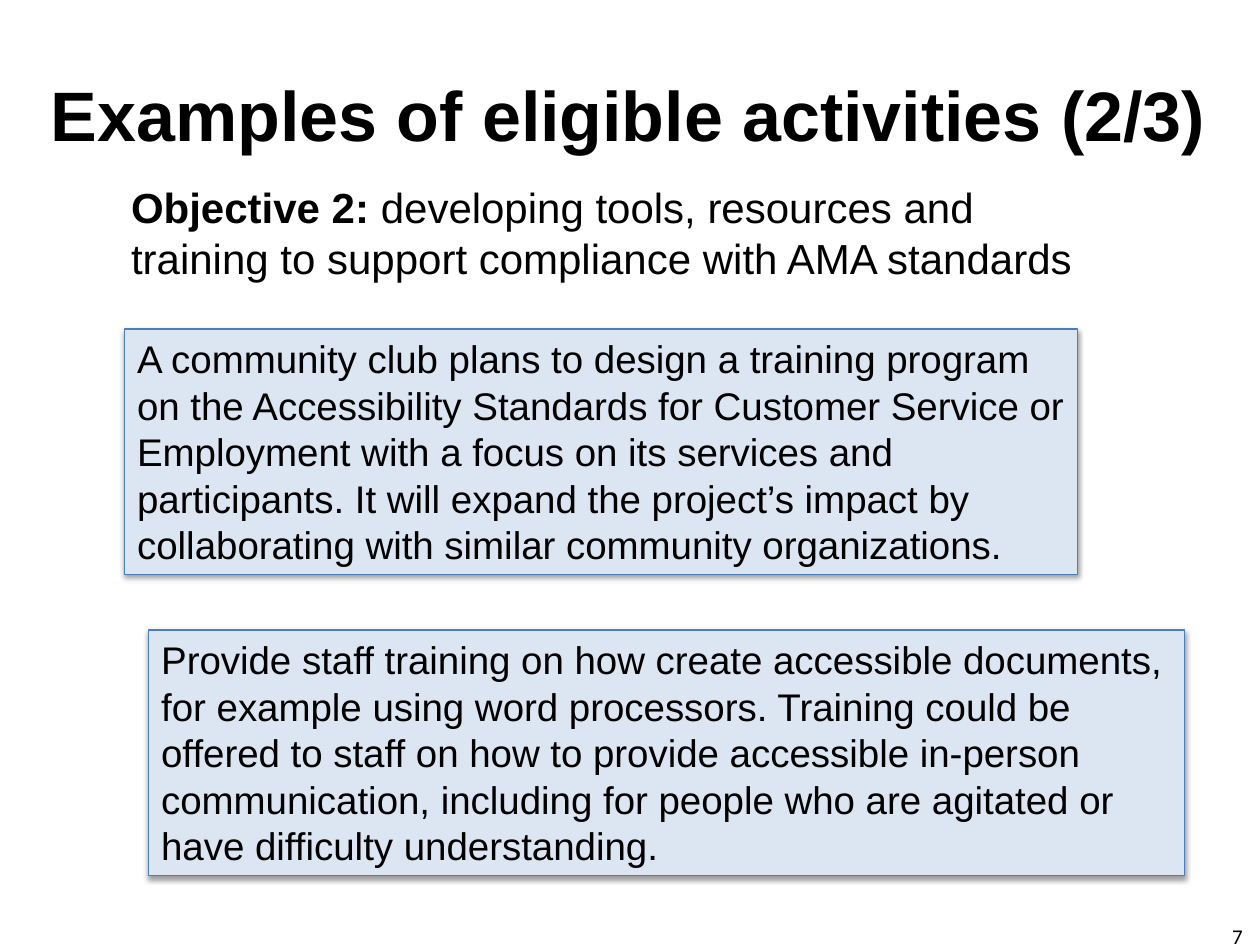
from lxml.etree import SubElement
from pptx import Presentation
from pptx.dml.color import RGBColor
from pptx.enum.shapes import MSO_SHAPE
from pptx.enum.text import MSO_ANCHOR as Anchor, PP_ALIGN as Align
from pptx.oxml.ns import qn
from pptx.util import Pt


def color(value):
    return RGBColor.from_string(value)


class SlideBuilder:
    """Hold the style and the current slide, and add each kind of element."""

    text, fill, line = "000000", "DCE6F2", "4B7EBC"

    def __init__(self, deck):
        self.page = deck.slides.add_slide(deck.slide_layouts[0])

    def place(self, shape, left, top, width, height):
        shape.left, shape.top = Pt(left), Pt(top)
        shape.width, shape.height = Pt(width), Pt(height)

    def set_text(self, shape, spans, size, align=Align.LEFT, anchor=Anchor.TOP,
                 spacing=None, font="Arial"):
        frame = shape.text_frame
        frame.word_wrap = True
        frame.vertical_anchor = anchor
        para = frame.paragraphs[0]
        para.alignment = align
        para.space_before = Pt(0)
        if spacing:
            para.line_spacing = Pt(spacing)
        para.font.name, para.font.size = font, Pt(size)
        para.font.color.rgb = color(self.text)
        for words, bold in spans:
            span = para.add_run()
            span.text = words
            span.font.bold = bold

    def title(self, words, *bounds):
        box = self.page.shapes.title
        self.place(box, *bounds)
        self.set_text(box, [(words, True)], 40, Align.CENTER, Anchor.MIDDLE)

    def objective(self, label, words, *bounds):
        box = self.page.placeholders[1]
        self.place(box, *bounds)
        frame = box.text_frame
        frame.margin_left = frame.margin_right = Pt(3.6)
        frame.margin_top = frame.margin_bottom = Pt(3.6)
        self.set_text(box, [(label, True), (words, False)], 24, spacing=29)

    def example(self, words, *bounds):
        box = self.page.shapes.add_shape(MSO_SHAPE.RECTANGLE, *map(Pt, bounds))
        box.fill.solid()
        box.fill.fore_color.rgb = color(self.fill)
        box.line.color.rgb = color(self.line)
        box.line.width = Pt(0.75)
        self.shade(box)
        self.set_text(box, [(words, False)], 22, spacing=26.5)

    def shade(self, box):
        box.shadow.inherit = False
        effects = box.element.spPr.find(qn("a:effectLst"))
        shadow = SubElement(effects, qn("a:outerShdw"), blurRad=str(Pt(3.1)),
                            dist=str(Pt(1.6)), dir="5400000", rotWithShape="0")
        tint = SubElement(shadow, qn("a:srgbClr"), val=self.text)
        SubElement(tint, qn("a:alpha"), val="38000")

    def page_number(self, number, *bounds):
        box = self.page.shapes.add_textbox(*map(Pt, bounds))
        self.set_text(box, [(number, False)], 12, font="Calibri")


def main():
    deck = Presentation()
    deck.slide_width, deck.slide_height = Pt(720), Pt(540)
    slide = SlideBuilder(deck)
    slide.title("Examples of eligible activities (2/3)", 9.4, 30.2, 699, 69)
    slide.objective(
        "Objective 2: ",
        "developing tools, resources and training to support compliance "
        "with AMA standards", 71.3, 100, 568.8, 77.8)
    slide.example(
        "A community club plans to design a training program on the "
        "Accessibility Standards for Customer Service or Employment with a "
        "focus on its services and participants. It will expand the project’s "
        "impact by collaborating with similar community organizations.",
        71.3, 188, 544.3, 140.4)
    slide.example(
        "Provide staff training on how create accessible documents, for "
        "example using word processors. Training could be offered to staff on "
        "how to provide accessible in-person communication, including for "
        "people who are agitated or have difficulty understanding.",
        85, 360, 591.8, 140.4)
    slide.page_number("7", 697, 524.2, 28.8, 28.8)
    deck.save("out.pptx")


if __name__ == "__main__":
    main()
